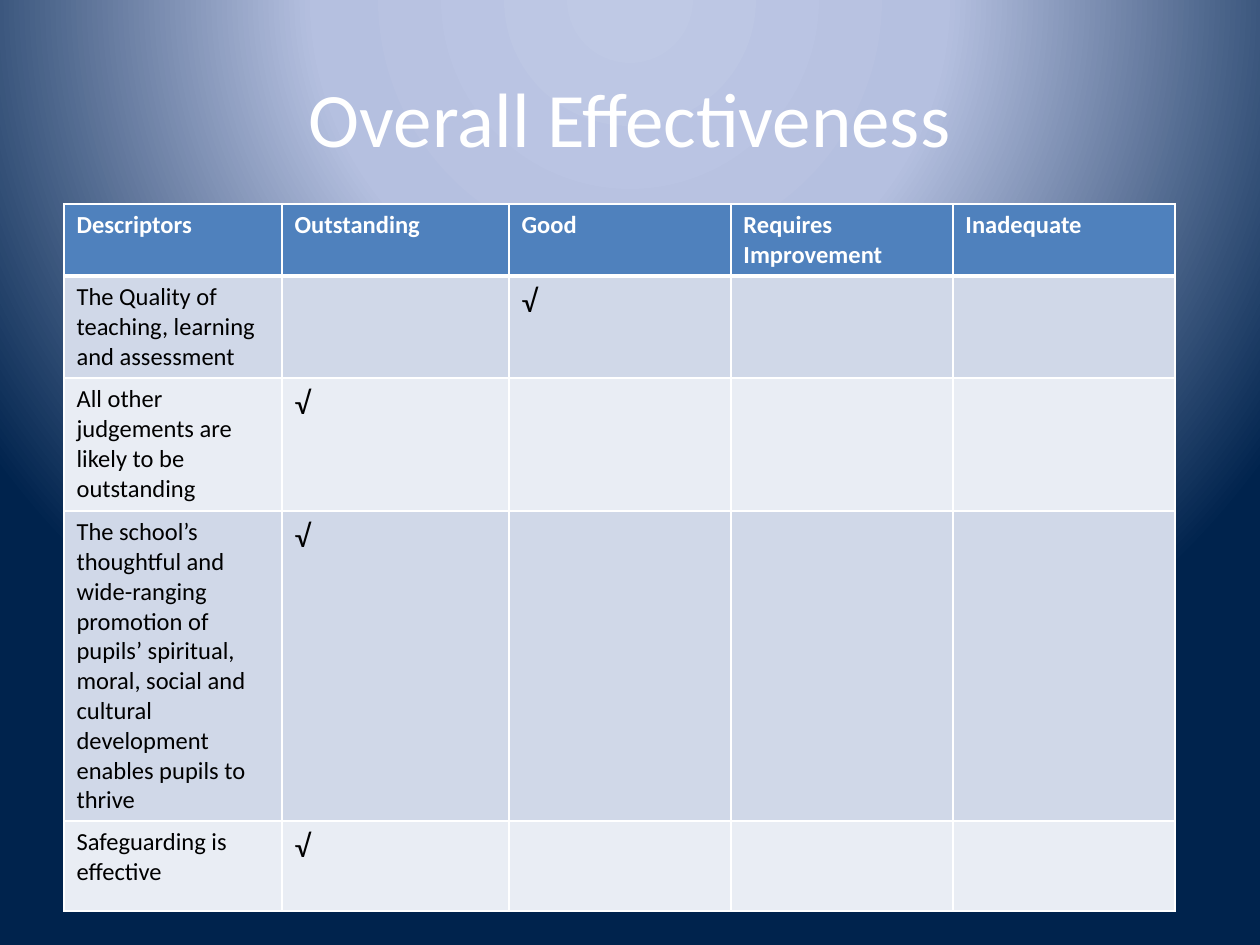
import dataclasses

import pptx
import pptx.dml.color
import pptx.enum.text
import pptx.oxml
import pptx.oxml.ns
import pptx.util

EMU_PER_PX = 914400 // 126
FONT = "Calibri"
WHITE, BLACK, BLUE = "FFFFFF", "000000", "4F81BD"
BANDS = ("D0D8E8", "E9EDF4")
CHECK = "√"
NS = pptx.oxml.ns.nsdecls("a")


@dataclasses.dataclass
class Row:
    height: int
    descriptor: str
    grade: str


GRADES = ("Outstanding", "Good", "Requires Improvement", "Inadequate")
COL_WIDTHS = (218, 227, 222, 222, 222)
HEADER_HEIGHT = 72
ROWS = (
    Row(102, "The Quality of teaching, learning and assessment", "Good"),
    Row(133, "All other judgements are likely to be outstanding", "Outstanding"),
    Row(310, "The school’s thoughtful and wide-ranging promotion of pupils’ "
             "spiritual, moral, social and cultural development enables "
             "pupils to thrive", "Outstanding"),
    Row(90, "Safeguarding is effective", "Outstanding"),
)


def px(n: int) -> int:
    return pptx.util.Emu(n * EMU_PER_PX)


def rgb(color: str) -> pptx.dml.color.RGBColor:
    return pptx.dml.color.RGBColor.from_string(color)


def set_text(p, text: str, size: int, color: str, bold: bool = False) -> None:
    p.text = text
    p.font.name = FONT
    p.font.size = pptx.util.Pt(size)
    p.font.bold = bold
    p.font.color.rgb = rgb(color)


def draw_background(s, stops: dict[int, str]) -> None:
    s.background.fill.solid()
    solid = s._element.find(".//" + pptx.oxml.ns.qn("p:bgPr"))[0]
    stop_xml = "".join(
        f'<a:gs pos="{pos * 1000}"><a:srgbClr val="{color}"/></a:gs>'
        for pos, color in stops.items())
    gradient = pptx.oxml.parse_xml(
        f'<a:gradFill {NS} rotWithShape="1"><a:gsLst>{stop_xml}</a:gsLst>'
        '<a:path path="circle"><a:fillToRect l="50000" t="-80000" '
        'r="50000" b="180000"/></a:path></a:gradFill>')
    solid.getparent().replace(solid, gradient)


def draw_title(s, text: str) -> None:
    tf = s.shapes.add_textbox(px(63), px(38), px(1134), px(157)).text_frame
    tf.word_wrap = True
    tf.vertical_anchor = pptx.enum.text.MSO_ANCHOR.MIDDLE
    p = tf.paragraphs[0]
    p.alignment = pptx.enum.text.PP_ALIGN.CENTER
    set_text(p, text, 44, WHITE)


def style_cell(cell, fill: str, top: int = 1, bottom: int = 1) -> None:
    cell.fill.solid()
    cell.fill.fore_color.rgb = rgb(fill)
    tc_pr = cell._tc.get_or_add_tcPr()
    # Borders come before the fill, in the order left, right, top, bottom
    widths = {"lnL": 1, "lnR": 1, "lnT": top, "lnB": bottom}
    for i, (tag, width) in enumerate(widths.items()):
        tc_pr.insert(i, pptx.oxml.parse_xml(
            f'<a:{tag} {NS} w="{pptx.util.Pt(width)}"><a:solidFill>'
            f'<a:srgbClr val="{WHITE}"/></a:solidFill></a:{tag}>'))


def draw_table(s) -> None:
    heights = (HEADER_HEIGHT, *(row.height for row in ROWS))
    table = s.shapes.add_table(
        len(heights), len(COL_WIDTHS), px(64), px(204),
        px(sum(COL_WIDTHS)), px(sum(heights))).table
    for column, width in zip(table.columns, COL_WIDTHS):
        column.width = px(width)
    for table_row, height in zip(table.rows, heights):
        table_row.height = px(height)

    # Header row
    for c, heading in enumerate(("Descriptors", *GRADES)):
        cell = table.cell(0, c)
        style_cell(cell, BLUE, bottom=3)
        set_text(cell.text_frame.paragraphs[0], heading, 14, WHITE, True)

    # Descriptor rows, each with one check mark under its grade
    for r, row in enumerate(ROWS, start=1):
        for c in range(len(COL_WIDTHS)):
            style_cell(table.cell(r, c), BANDS[(r - 1) % 2],
                       top=3 if r == 1 else 1)
        marked = table.cell(r, 1 + GRADES.index(row.grade))
        set_text(table.cell(r, 0).text_frame.paragraphs[0],
                 row.descriptor, 14, BLACK)
        set_text(marked.text_frame.paragraphs[0], CHECK, 18, BLACK)


def main() -> None:
    prs = pptx.Presentation()
    prs.slide_width, prs.slide_height = px(1260), px(945)
    s = prs.slides.add_slide(prs.slide_layouts[6])
    draw_background(s, {0: "BFC9E5", 40: "B5C0E0", 100: "00234D"})
    draw_title(s, "Overall Effectiveness")
    draw_table(s)
    prs.save("out.pptx")


if __name__ == "__main__":
    main()
